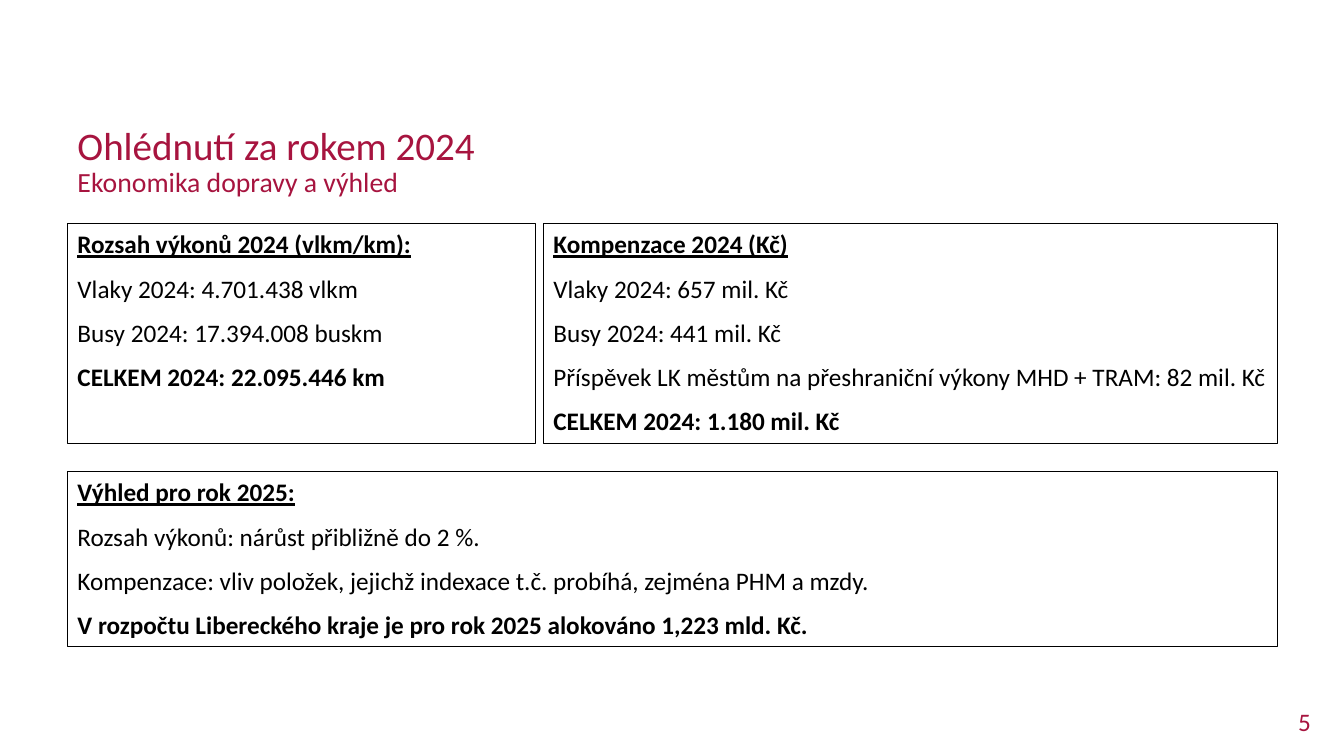
from pptx import Presentation
from pptx.dml.color import RGBColor
from pptx.enum.shapes import MSO_SHAPE
from pptx.enum.text import MSO_ANCHOR, PP_ALIGN
from pptx.util import Inches, Pt

RECTANGLE = MSO_SHAPE.RECTANGLE
TOP, BOTTOM = MSO_ANCHOR.TOP, MSO_ANCHOR.BOTTOM
LEFT, RIGHT = PP_ALIGN.LEFT, PP_ALIGN.RIGHT
BLACK = RGBColor(0x00, 0x00, 0x00)
CRIMSON = RGBColor(0xA7, 0x14, 0x3F)

LEFT_EDGE = 0.67
RIGHT_EDGE = 12.67
RESULTS_TOP = 2.22
RESULTS_HEIGHT = 2.18

RANGE_LINES = [
    "Rozsah výkonů 2024 (vlkm/km):",
    "Vlaky 2024: 4.701.438 vlkm",
    "Busy 2024: 17.394.008 buskm",
    "CELKEM 2024: 22.095.446 km",
]
COMPENSATION_LINES = [
    "Kompenzace 2024 (Kč)",
    "Vlaky 2024: 657 mil. Kč",
    "Busy 2024: 441 mil. Kč",
    "Příspěvek LK městům na přeshraniční výkony MHD + TRAM: 82 mil. Kč",
    "CELKEM 2024: 1.180 mil. Kč",
]
OUTLOOK_LINES = [
    "Výhled pro rok 2025:",
    "Rozsah výkonů: nárůst přibližně do 2 %.",
    "Kompenzace: vliv položek, jejichž indexace t.č. probíhá, zejména PHM a mzdy.",
    "V rozpočtu Libereckého kraje je pro rok 2025 alokováno 1,223 mld. Kč.",
]


def add_text(paragraph, text, size=18, color=BLACK, bold=False, underline=False):
    run = paragraph.add_run()
    run.text = text
    font = run.font
    font.name = "Calibri"
    font.size = Pt(size)
    font.color.rgb = color
    font.bold = bold
    font.underline = underline


class SlideBuilder:
    def __init__(self, slide):
        self.slide = slide

    def text_box(self, left, top, width, height, anchor=TOP, alignment=LEFT):
        shape = self.slide.shapes.add_textbox(
            Inches(left), Inches(top), Inches(width), Inches(height))
        frame = shape.text_frame
        frame.word_wrap = True
        frame.vertical_anchor = anchor
        paragraph = frame.paragraphs[0]
        paragraph.alignment = alignment
        return paragraph

    def title(self, heading, subheading):
        paragraph = self.text_box(LEFT_EDGE, 1.39, 10.75, 0.63, anchor=BOTTOM)
        paragraph.line_spacing = 0.9
        add_text(paragraph, heading, size=27.9, color=CRIMSON)
        paragraph.add_line_break()
        add_text(paragraph, subheading, size=19.8, color=CRIMSON)

    def page_number(self, number):
        paragraph = self.text_box(12.44, 6.96, 0.66, 0.4, alignment=RIGHT)
        add_text(paragraph, number, color=CRIMSON)

    def panel(self, left, top, right, height, lines):
        shape = self.slide.shapes.add_shape(
            RECTANGLE, Inches(left), Inches(top), Inches(right - left), Inches(height))
        shape.shadow.inherit = False
        shape.fill.background()
        shape.line.color.rgb = BLACK
        shape.line.width = Pt(0.75)
        frame = shape.text_frame
        frame.word_wrap = True
        frame.vertical_anchor = TOP
        last = len(lines) - 1
        for index, line in enumerate(lines):
            paragraph = frame.add_paragraph() if index else frame.paragraphs[0]
            paragraph.alignment = LEFT
            paragraph.space_before = Pt(10 if index else 0)
            add_text(paragraph, line, bold=index in (0, last), underline=index == 0)


def main():
    presentation = Presentation()
    presentation.slide_width = Inches(13.33)
    presentation.slide_height = Inches(7.5)
    builder = SlideBuilder(presentation.slides.add_slide(presentation.slide_layouts[6]))
    builder.title("Ohlédnutí za rokem 2024", "Ekonomika dopravy a výhled")
    builder.panel(LEFT_EDGE, RESULTS_TOP, 5.31, RESULTS_HEIGHT, RANGE_LINES)
    builder.panel(5.39, RESULTS_TOP, RIGHT_EDGE, RESULTS_HEIGHT, COMPENSATION_LINES)
    builder.panel(LEFT_EDGE, 4.68, RIGHT_EDGE, 1.73, OUTLOOK_LINES)
    builder.page_number("5")
    presentation.save("out.pptx")


if __name__ == "__main__":
    main()
